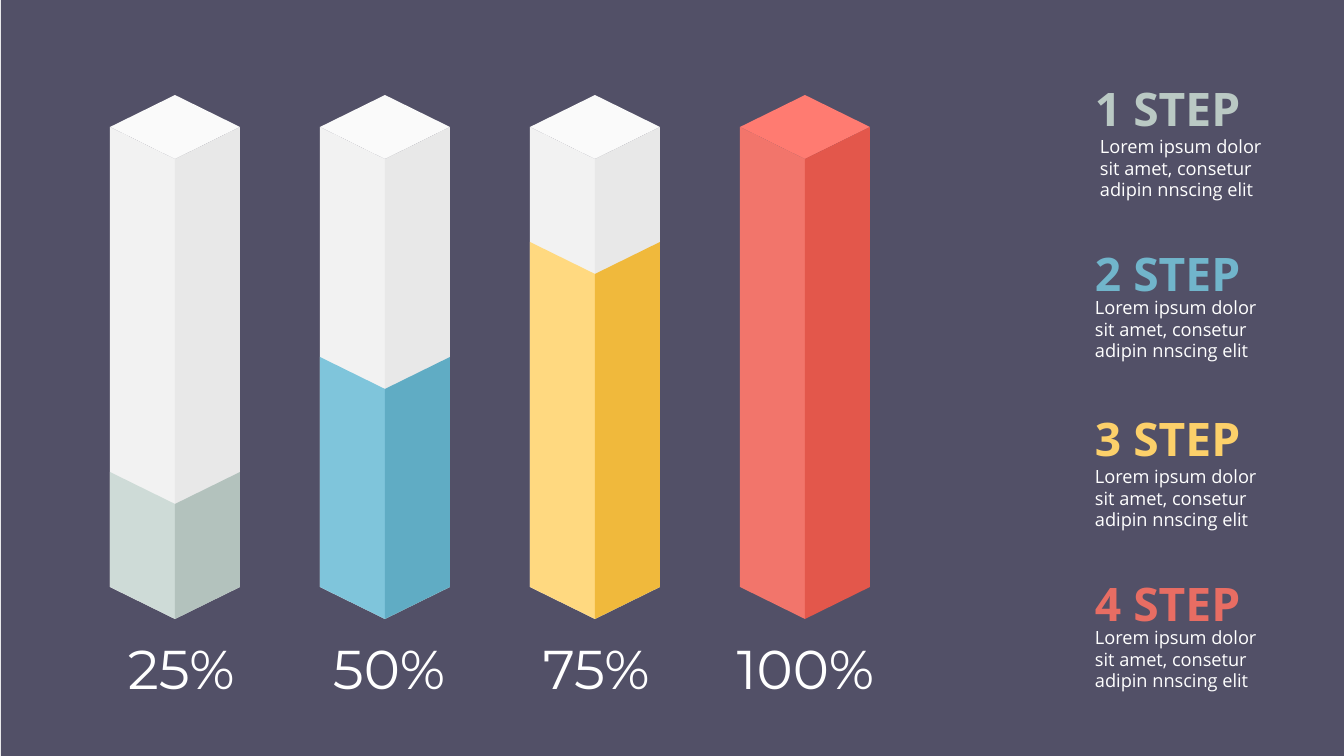
import pptx
import pptx.dml.color
import pptx.enum.shapes
import pptx.enum.text
import pptx.util

EMU_PER_PX = 914400 / 100.8
SLIDE_WIDTH, SLIDE_HEIGHT = 1344, 756

COLORS = {
    "background": "525067",
    "text": "FFFFFF",
    "empty": ("FAFAFA", "F2F2F2", "E8E8E8"),
    "full_lid": "FF7B71",
}

COLUMN_LEFT, COLUMN_PITCH, HALF_WIDTH = 110, 210, 65
COLUMN_TOP, COLUMN_BASE, SLOPE = 127, 587, 32
LABEL_TOP, LABEL_HEIGHT = 635, 67
STEP_LEFT, STEP_TOP, STEP_PITCH = 1095, 80, 165
DESCRIPTION = "Lorem ipsum dolor sit amet, consetur adipin nnscing elit"

COLUMNS = [
    (25, "CEDBD7", "B3C2BD", 128, 118),
    (50, "7FC5DB", "60ACC4", 333, 123),
    (75, "FFD980", "F0B93C", 543, 117),
    (100, "F2756B", "E3574B", 737, 146),
]
STEPS = [
    ("1 STEP", "BAC9C4", 1090, 130),
    ("2 STEP", "71B5CB", 1085, 291),
    ("3 STEP", "FCD06A", 1085, 460),
    ("4 STEP", "E86D63", 1085, 621),
]


def px(length):
    return pptx.util.Emu(round(length * EMU_PER_PX))


def rgb(color):
    return pptx.dml.color.RGBColor.from_string(color)


class SlideBuilder:
    heading_font = "Open Sans"
    number_font = "Montserrat"

    def __init__(self, slide):
        self.slide = slide

    def paint(self, shape, color):
        shape.shadow.inherit = False
        shape.fill.solid()
        shape.fill.fore_color.rgb = rgb(color)
        shape.line.fill.background()

    def rectangle(self, left, top, width, height, color):
        shape = self.slide.shapes.add_shape(
            pptx.enum.shapes.MSO_SHAPE.RECTANGLE,
            px(left), px(top), px(width), px(height))
        self.paint(shape, color)

    def polygon(self, points, color):
        builder = self.slide.shapes.build_freeform(*points[0], scale=EMU_PER_PX)
        builder.add_line_segments(points[1:], close=True)
        self.paint(builder.convert_to_shape(), color)

    def text(self, box, words, size, font, color, bold=False, wrap=False, inset=(0, 0)):
        shape = self.slide.shapes.add_textbox(*map(px, box))
        frame = shape.text_frame
        frame.word_wrap = wrap
        frame.auto_size = pptx.enum.text.MSO_AUTO_SIZE.NONE
        frame.margin_left = frame.margin_right = px(inset[0])
        frame.margin_top = frame.margin_bottom = px(inset[1])
        paragraph = frame.paragraphs[0]
        paragraph.text = words
        paragraph.font.size = pptx.util.Pt(size)
        paragraph.font.name = font
        paragraph.font.bold = bold
        paragraph.font.color.rgb = rgb(color)

    def lid(self, left, color):
        center, right = left + HALF_WIDTH, left + 2 * HALF_WIDTH
        self.polygon([(center, COLUMN_TOP - SLOPE), (right, COLUMN_TOP),
                      (center, COLUMN_TOP + SLOPE), (left, COLUMN_TOP)], color)

    def walls(self, left, top, left_color, right_color):
        center = left + HALF_WIDTH
        for edge, color in ((left, left_color), (center + HALF_WIDTH, right_color)):
            self.polygon([(edge, top), (center, top + SLOPE),
                          (center, COLUMN_BASE + SLOPE), (edge, COLUMN_BASE)], color)

    def column(self, left, percent, left_color, right_color):
        lid_color, empty_left, empty_right = COLORS["empty"]
        if percent == 100:
            self.lid(left, COLORS["full_lid"])
        else:
            self.lid(left, lid_color)
            self.walls(left, COLUMN_TOP, empty_left, empty_right)
        level = COLUMN_BASE - (COLUMN_BASE - COLUMN_TOP) * percent // 100
        self.walls(left, level, left_color, right_color)


def main():
    presentation = pptx.Presentation()
    presentation.slide_width = px(SLIDE_WIDTH)
    presentation.slide_height = px(SLIDE_HEIGHT)
    builder = SlideBuilder(presentation.slides.add_slide(presentation.slide_layouts[6]))

    builder.rectangle(1, 0, SLIDE_WIDTH - 1, SLIDE_HEIGHT, COLORS["background"])

    for index, (percent, left_color, right_color, label_left, label_width) in enumerate(COLUMNS):
        builder.column(COLUMN_LEFT + index * COLUMN_PITCH, percent, left_color, right_color)
        builder.text((label_left, LABEL_TOP, label_width, LABEL_HEIGHT), f"{percent}%",
                     39, builder.number_font, COLORS["text"])

    for index, (heading, color, description_left, description_top) in enumerate(STEPS):
        builder.text((STEP_LEFT, STEP_TOP + index * STEP_PITCH, 148, 56), heading,
                     33, builder.heading_font, color, bold=True)
        builder.text((description_left, description_top, 183, 77), DESCRIPTION,
                     13, builder.heading_font, COLORS["text"], wrap=True, inset=(10, 5))

    presentation.save("out.pptx")


if __name__ == "__main__":
    main()
